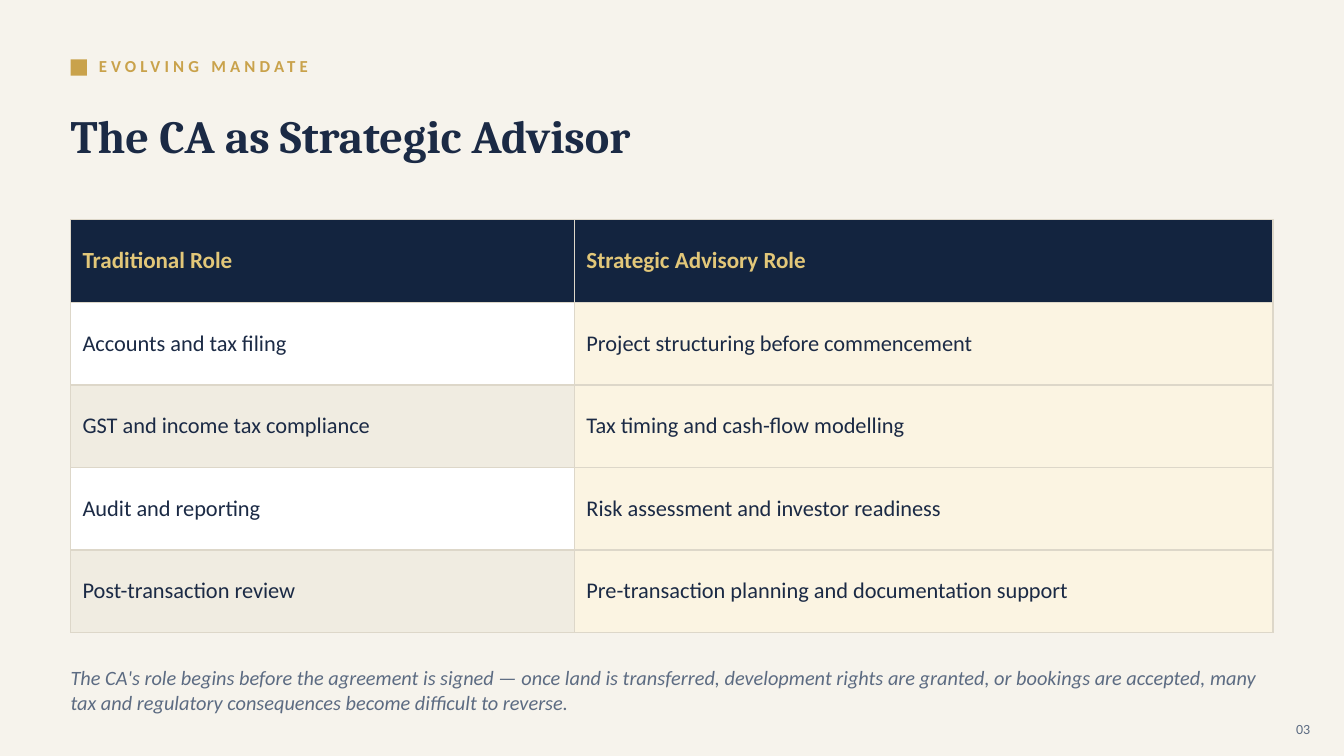
"""Build the slide on the chartered accountant as strategic advisor."""
from dataclasses import dataclass

from lxml import etree
from pptx import Presentation
from pptx.dml.color import RGBColor
from pptx.enum.shapes import MSO_SHAPE
from pptx.enum.text import MSO_ANCHOR, PP_ALIGN
from pptx.oxml.ns import qn
from pptx.util import Cm, Pt

RECTANGLE = MSO_SHAPE.RECTANGLE
MIDDLE = MSO_ANCHOR.MIDDLE
LEFT, RIGHT = PP_ALIGN.LEFT, PP_ALIGN.RIGHT


@dataclass(frozen=True)
class Theme:
    """Colours, fonts and type sizes of the slide."""
    paper: str = "F6F3EC"
    gold: str = "C9A24B"
    pale_gold: str = "E2C779"
    ink: str = "1B2A45"
    navy: str = "13243F"
    slate: str = "5C6B82"
    white: str = "FFFFFF"
    stone: str = "F0ECE1"
    cream: str = "FBF4E2"
    rule: str = "DDD7C9"
    body_font: str = "Calibri"
    title_font: str = "Cambria"
    title_size: float = 33
    header_size: float = 16.5
    cell_size: float = 16
    note_size: float = 14.5
    kicker_size: float = 12
    folio_size: float = 10


THEME = Theme()
MARGIN = 1.78
COLUMN_WIDTHS = (12.7, 17.6)
ROW_HEIGHT = 2.08
ROLES = (
    ("Traditional Role", "Strategic Advisory Role"),
    ("Accounts and tax filing", "Project structuring before commencement"),
    ("GST and income tax compliance", "Tax timing and cash-flow modelling"),
    ("Audit and reporting", "Risk assessment and investor readiness"),
    ("Post-transaction review",
     "Pre-transaction planning and documentation support"),
)
CLOSING_NOTE = (
    "The CA's role begins before the agreement is signed — once land is "
    "transferred, development rights are granted, or bookings are accepted, "
    "many tax and regulatory consequences become difficult to reverse."
)


def paint(fill, colour):
    """Give a fill one solid colour."""
    fill.solid()
    fill.fore_color.rgb = RGBColor.from_string(colour)


def write(frame, text, *, size, colour, font=THEME.body_font, bold=False,
          italic=False, align=LEFT, spacing=0):
    """Write one formatted paragraph into a text frame."""
    paragraph = frame.paragraphs[0]
    paragraph.alignment = align
    run = paragraph.add_run()
    run.text = text
    run.font.name = font
    run.font.size = Pt(size)
    run.font.bold = bold
    run.font.italic = italic
    run.font.color.rgb = RGBColor.from_string(colour)
    if spacing:
        run.font._element.set("spc", str(spacing * 100))


def add_label(slide, text, left, top, width, height, **style):
    """Add a wrapped text box without insets, centred vertically."""
    label = slide.shapes.add_textbox(Cm(left), Cm(top), Cm(width), Cm(height))
    frame = label.text_frame
    frame.word_wrap = True
    frame.vertical_anchor = MIDDLE
    frame.margin_left = frame.margin_right = 0
    frame.margin_top = frame.margin_bottom = 0
    write(frame, text, **style)


def add_marker(slide, left, top, side):
    """Add the small gold square before the section label."""
    marker = slide.shapes.add_shape(RECTANGLE, Cm(left), Cm(top),
                                    Cm(side), Cm(side))
    marker.shadow.inherit = False
    paint(marker.fill, THEME.gold)
    marker.line.fill.background()


def set_borders(cell):
    """Draw a thin rule on all four sides of a cell."""
    properties = cell._tc.get_or_add_tcPr()
    for position, side in enumerate(("lnL", "lnR", "lnT", "lnB")):
        border = etree.Element(qn(f"a:{side}"), w=str(Pt(1)))
        solid = etree.SubElement(border, qn("a:solidFill"))
        etree.SubElement(solid, qn("a:srgbClr"), val=THEME.rule)
        properties.insert(position, border)


def cell_fill(row, column):
    """Return the background colour for a place in the table."""
    if row == 0:
        return THEME.navy
    if column == 1:
        return THEME.cream
    return THEME.white if row % 2 else THEME.stone


def add_roles_table(slide, left, top):
    """Add the comparison of traditional and advisory roles."""
    table = slide.shapes.add_table(
        len(ROLES), len(COLUMN_WIDTHS), Cm(left), Cm(top),
        Cm(sum(COLUMN_WIDTHS)), Cm(ROW_HEIGHT * len(ROLES))).table
    table.horz_banding = False
    for column, width in zip(table.columns, COLUMN_WIDTHS):
        column.width = Cm(width)
    header_style = dict(size=THEME.header_size, colour=THEME.pale_gold,
                        bold=True)
    role_style = dict(size=THEME.cell_size, colour=THEME.ink)
    for row, roles in enumerate(ROLES):
        table.rows[row].height = Cm(ROW_HEIGHT)
        for column, role in enumerate(roles):
            cell = table.cell(row, column)
            cell.vertical_anchor = MIDDLE
            cell.margin_left = cell.margin_right = Cm(0.3)
            cell.margin_top = cell.margin_bottom = Cm(0.18)
            paint(cell.fill, cell_fill(row, column))
            set_borders(cell)
            write(cell.text_frame, role,
                  **(role_style if row else header_style))


def main():
    """Build the slide and save it."""
    deck = Presentation()
    deck.slide_width, deck.slide_height = Cm(33.87), Cm(19.05)
    slide = deck.slides.add_slide(deck.slide_layouts[6])
    paint(slide.background.fill, THEME.paper)
    add_marker(slide, MARGIN, 1.5, 0.41)
    add_label(slide, "EVOLVING MANDATE", 2.49, 1.22, 22.86, 0.86,
              size=THEME.kicker_size, colour=THEME.gold, bold=True, spacing=3)
    add_label(slide, "The CA as Strategic Advisor", MARGIN, 2.24, 30.35, 2.34,
              size=THEME.title_size, colour=THEME.ink, font=THEME.title_font,
              bold=True)
    add_roles_table(slide, MARGIN, 5.54)
    add_label(slide, CLOSING_NOTE, MARGIN, 16.81, 30.23, 1.14,
              size=THEME.note_size, colour=THEME.slate, italic=True)
    add_label(slide, "03", 31.5, 17.98, 1.52, 0.76,
              size=THEME.folio_size, colour=THEME.slate, align=RIGHT)
    deck.save("out.pptx")


if __name__ == "__main__":
    main()
